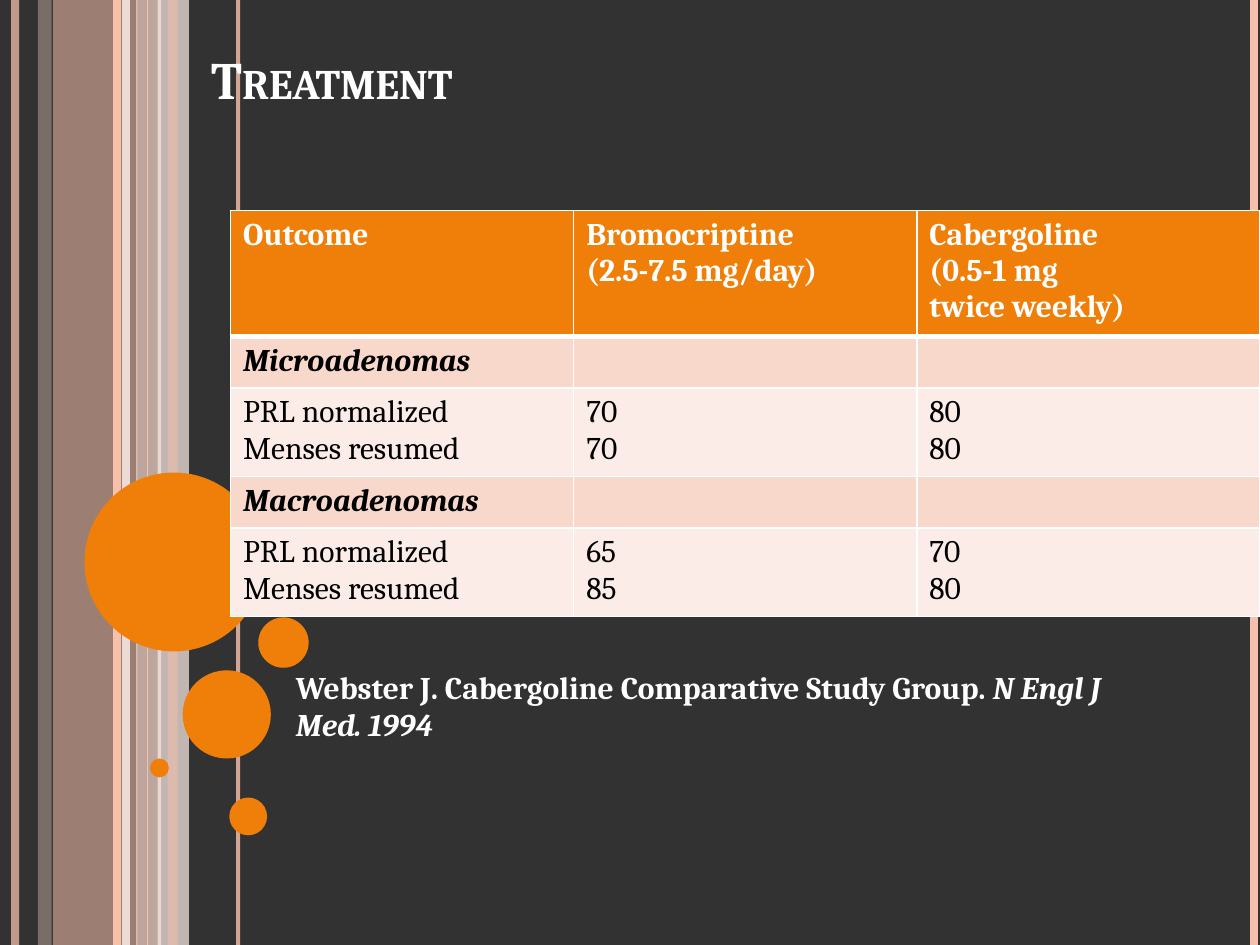
from lxml import etree
from pptx import Presentation
from pptx.dml.color import RGBColor
from pptx.enum import shapes, text
from pptx.oxml.ns import qn
from pptx.util import Inches, Pt

COLORS = {"dark": "323232", "orange": "F07F09", "rose": "F6C0AB",
          "pink": "F9D8CC", "pale": "FCECE7", "white": "FFFFFF", "black": "000000"}
FONT = "Cambria"
WIDTH, HEIGHT = 10, 7.5

# Bands: left, width, color, opacity %
BANDS = [(0.42, 0.67, "rose", 54), (0.3, 0.11, "pink", 36),
         (1.08, 0.2, "pink", 70), (1.25, 0.25, "pale", 71)]
# Lines: x, points, color, opacity %
LINES = [(0.12, 4.5, "rose", 73), (1, 4.5, "pale", 83), (0.93, 4.5, "rose", 100),
         (1.89, 2.25, "rose", 82), (1.17, 0.75, "rose", 100)]
TOP_BAND = (1.33, 0.08, "rose", 51)
EDGE = (9.95, 4.5, "rose", 100)
# Circles: left, top, diameter
CIRCLES = [(0.67, 3.75, 1.42), (1.45, 5.32, 0.7), (1.19, 6.02, 0.15),
           (1.82, 6.33, 0.3), (2.05, 4.9, 0.4)]

TITLE = "Treatment"
SOURCE = [("Webster J. Cabergoline Comparative Study Group. ", False),
          ("N Engl J Med. 1994", True)]

# Row kinds: fill, text color, bold, italic, height
KINDS = {"head": ("orange", "white", True, False, 0.96),
         "group": ("pink", "black", True, True, 0.41),
         "data": ("pale", "black", False, False, 0.67)}
ROWS = [
    ("head", ["Outcome"], ["Bromocriptine", "(2.5-7.5 mg/day)"],
     ["Cabergoline", "(0.5-1 mg", "twice weekly)"]),
    ("group", ["Microadenomas"], [], []),
    ("data", ["PRL normalized", "Menses resumed"], ["70", "70"], ["80", "80"]),
    ("group", ["Macroadenomas"], [], []),
    ("data", ["PRL normalized", "Menses resumed"], ["65", "85"], ["70", "80"]),
]


def rgb(name):
    return RGBColor.from_string(COLORS[name])


def fade(shape, alpha):
    """Set the opacity of the shape's one color, in percent."""
    if alpha < 100:
        color = next(shape._element.spPr.iter(qn("a:srgbClr")))
        etree.SubElement(color, qn("a:alpha")).set("val", str(alpha * 1000))


def add_solid(slide, kind, box, color, alpha=100):
    shape = slide.shapes.add_shape(kind, *map(Inches, box))
    shape.shadow.inherit = False
    shape.fill.solid()
    shape.fill.fore_color.rgb = rgb(color)
    shape.line.fill.background()
    fade(shape, alpha)


def add_band(slide, left, width, color, alpha):
    add_solid(slide, shapes.MSO_SHAPE.RECTANGLE, (left, 0, width, HEIGHT), color, alpha)


def add_line(slide, x, weight, color, alpha):
    line = slide.shapes.add_connector(shapes.MSO_CONNECTOR.STRAIGHT, Inches(x), 0,
                                      Inches(x), Inches(HEIGHT))
    line.line.width = Pt(weight)
    line.line.color.rgb = rgb(color)
    fade(line, alpha)
    etree.SubElement(line._element.spPr, qn("a:effectLst"))


def style(para, size, color, bold, italic=None):
    font = para.font
    font.name, font.size, font.bold, font.italic = FONT, Pt(size), bold, italic
    font.color.rgb = rgb(color)


def add_text(slide, box, runs, size, anchor):
    frame = slide.shapes.add_textbox(*map(Inches, box)).text_frame
    frame.word_wrap = True
    frame.vertical_anchor = anchor
    para = frame.paragraphs[0]
    for words, italic in runs:
        run = para.add_run()
        run.text = words
        if italic:
            run.font.italic = True
    style(para, size, "white", True)
    return para


def add_borders(cell, top, bottom):
    props = cell._tc.get_or_add_tcPr()
    sides = [("L", 1), ("R", 1), ("T", top), ("B", bottom)]
    for place, (side, weight) in enumerate(sides):
        line = etree.Element(qn("a:ln" + side), w=str(Pt(weight)))
        fill = etree.SubElement(line, qn("a:solidFill"))
        etree.SubElement(fill, qn("a:srgbClr")).set("val", COLORS["white"])
        props.insert(place, line)


def add_table(slide, left, top, width):
    height = sum(KINDS[row[0]][4] for row in ROWS)
    table = slide.shapes.add_table(len(ROWS), 3, *map(Inches, (left, top, width, height))).table
    for r, (kind, *cells) in enumerate(ROWS):
        fill, color, bold, italic, tall = KINDS[kind]
        table.rows[r].height = Inches(tall)
        for c, lines in enumerate(cells):
            cell = table.cell(r, c)
            cell.text = "\n".join(lines)
            for para in cell.text_frame.paragraphs:
                style(para, 18, color, bold, italic)
            cell.fill.solid()
            cell.fill.fore_color.rgb = rgb(fill)
            add_borders(cell, 3 if r == 1 else 1, 3 if r == 0 else 1)


def main():
    deck = Presentation()
    deck.slide_width, deck.slide_height = Inches(WIDTH), Inches(HEIGHT)
    slide = deck.slides.add_slide(deck.slide_layouts[6])
    slide.background.fill.solid()
    slide.background.fill.fore_color.rgb = rgb("dark")

    for band in BANDS:
        add_band(slide, *band)
    for line in LINES:
        add_line(slide, *line)
    add_band(slide, *TOP_BAND)
    for left, top, size in CIRCLES:
        add_solid(slide, shapes.MSO_SHAPE.OVAL, (left, top, size, size), "orange")
    add_line(slide, *EDGE)

    title = add_text(slide, (1.58, 0, 7.67, 0.92), [(TITLE, False)], 30,
                     text.MSO_ANCHOR.BOTTOM)
    title.runs[0]._r.get_or_add_rPr().set("cap", "small")
    add_text(slide, (2.25, 5.25, 7, 1.73), SOURCE, 18, text.MSO_ANCHOR.TOP)
    add_table(slide, 1.83, 1.67, 8.17)
    deck.save("out.pptx")


if __name__ == "__main__":
    main()
